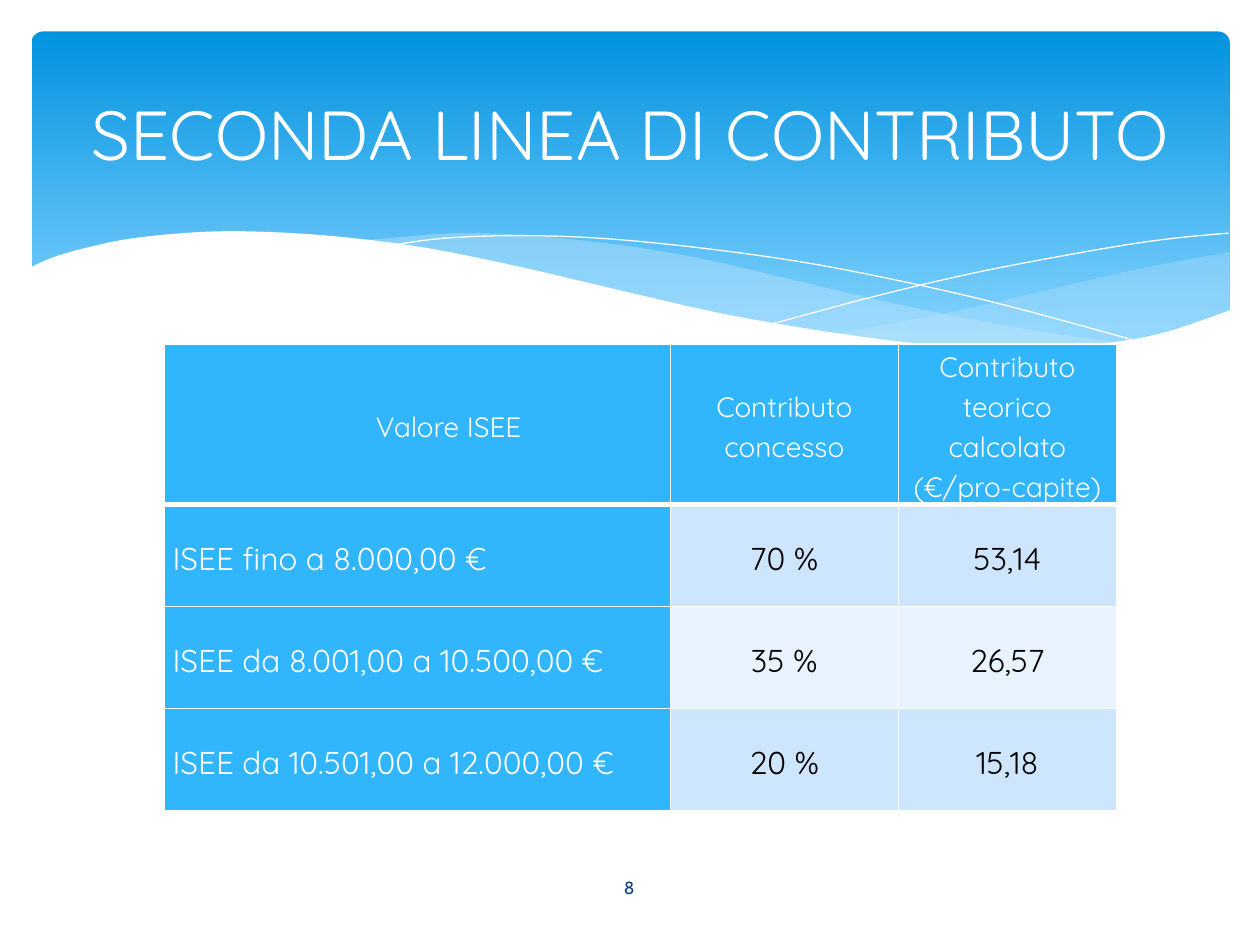
from collections import namedtuple

from lxml.etree import SubElement
from pptx import Presentation
from pptx.dml.color import RGBColor
from pptx.enum.shapes import MSO_SHAPE as Shape
from pptx.enum.text import MSO_ANCHOR as Anchor, MSO_AUTO_SIZE as AutoSize, PP_ALIGN as Align
from pptx.oxml import parse_xml
from pptx.oxml.ns import nsdecls, qn
from pptx.util import Inches, Pt

COLORS = {
    "white": "FFFFFF", "black": "000000", "navy": "073E87",
    "sky_top": "0293E0", "sky_bottom": "83D3FE", "wave": "C6E7FC",
    "head": "31B6FD", "odd_row": "CEE5FE", "even_row": "E8F3FF",
}
Box = namedtuple("Box", "left top width height")

PAGE = Box(0, 0, 10, 7.5)
BAND = Box(0.25, 0.25, 9.51, 2.7)
WAVES = Box(0, 1.84, 10, 1.45)
TABLE = Box(1.3, 2.73, 7.56, 3.65)
TITLE = Box(0.5, 0.37, 9, 1.37)
NUMBER = Box(4.36, 6.84, 1.27, 0.4)

COLUMNS = [4.02, 1.81, 1.73]
ROW_HEIGHT = 0.81
ROWS = [
    ["Valore ISEE", "Contributo concesso", "Contributo teorico calcolato (€/pro-capite)"],
    ["ISEE fino a 8.000,00 €", "70 %", "53,14"],
    ["ISEE da 8.001,00 a 10.500,00 €", "35 %", "26,57"],
    ["ISEE da 10.501,00 a 12.000,00 €", "20 %", "15,18"],
]

# Wave edges: points in tenths of the box width, from the box's top left corner.
RIGHT_TOP = [(9.76, 0.16), (9.06, 0.29), (8.32, 0.46), (7.53, 0.64), (6.61, 0.81)]
RIGHT_BOTTOM = [(6.61, 0.81), (7.19, 0.87), (7.81, 0.93), (8.35, 0.93), (8.89, 0.88),
                (9.35, 0.78), (9.76, 0.63)]
MIDDLE_TOP = [(8.93, 0.89), (8.07, 0.76), (7.06, 0.56), (6.29, 0.38), (5.55, 0.21),
              (4.89, 0.1), (4.2, 0.03), (3.61, 0.01), (2.86, 0.07)]
MIDDLE_BOTTOM = [(2.86, 0.07), (3.62, 0.19), (4.49, 0.38), (5.3, 0.56), (6.01, 0.71),
                 (6.8, 0.84), (7.48, 0.92), (8.18, 0.94), (8.93, 0.89)]
FALLING_LINE = [(3.09, 0.11), (3.53, 0.05), (4.16, 0.03), (4.89, 0.06), (5.82, 0.16),
                (6.65, 0.29), (7.6, 0.49), (8.31, 0.67), (9.07, 0.88)]
RISING_LINE = [(6.13, 0.73), (6.95, 0.51), (7.76, 0.32), (8.66, 0.15), (9.24, 0.06), (9.75, 0.01)]
WHITE_TOP = [(9.77, 0.62), (9.2, 0.81), (8.63, 0.9), (8.09, 0.93), (7.44, 0.9), (6.68, 0.81),
             (5.79, 0.66), (5.03, 0.49), (4.18, 0.29), (3.4, 0.13), (2.71, 0.04), (2.11, 0),
             (1.61, 0), (1.06, 0.05), (0.67, 0.13), (0.4, 0.21), (0.23, 0.29)]
WHITE_BOTTOM = [(0.23, 1.45), (9.77, 1.45)]


def color(name):
    return RGBColor.from_string(COLORS[name])


def emu(box):
    return [Inches(length) for length in box]


def write(frame, text, size=16, font="Quicksand", ink="white", align=Align.CENTER, **spacing):
    """Put one paragraph in the frame; spacing holds paragraph properties."""
    frame.word_wrap = True
    para = frame.paragraphs[0]
    para.alignment = align
    for name, value in spacing.items():
        setattr(para, name, value)
    span = para.add_run()
    span.text = text
    span.font.size, span.font.name, span.font.bold = Pt(size), font, False
    span.font.color.rgb = color(ink)
    return para


def smooth(points, steps=5):
    """Points of a Catmull-Rom curve through the given points."""
    padded = [points[0], *points, points[-1]]
    curve = [points[0]]
    for a, b, c, d in zip(padded, padded[1:], padded[2:], padded[3:]):
        for step in range(1, steps + 1):
            t = step / steps
            curve.append(tuple(
                (2 * q + (r - p) * t + (2 * p - 5 * q + 4 * r - s) * t ** 2
                 + (3 * q - p - 3 * r + s) * t ** 3) / 2
                for p, q, r, s in zip(a, b, c, d)))
    return curve


def add_wave(page, box, points, fill=None, opacity=100):
    """Draw a filled area, or a white hairline when there is no fill."""
    unit = box.width / 10
    spots = [(Inches(box.left + x * unit), Inches(box.top + y * unit)) for x, y in points]
    builder = page.shapes.build_freeform(*spots[0])
    builder.add_line_segments(spots[1:], close=fill is not None)
    wave = builder.convert_to_shape()
    wave.shadow.inherit = False
    if fill is None:
        wave.fill.background()
        wave.line.color.rgb = color("white")
        wave.line.width = 0
        return
    wave.line.fill.background()
    wave.fill.solid()
    wave.fill.fore_color.rgb = color(fill)
    if opacity < 100:
        tint = wave.fill._xPr.find(".//" + qn("a:srgbClr"))
        SubElement(tint, qn("a:alpha")).set("val", str(opacity * 1000))


def add_band(page, box):
    band = page.shapes.add_shape(Shape.ROUNDED_RECTANGLE, *emu(box))
    band.adjustments[0] = 0.034
    band.shadow.inherit = False
    band.line.fill.background()
    band.fill.gradient()
    band.fill.gradient_angle = 270
    stops = zip(band.fill.gradient_stops, (0, 0.9), ("sky_top", "sky_bottom"))
    for stop, position, name in stops:
        stop.position = position
        stop.color.rgb = color(name)


def add_waves(page, box):
    add_wave(page, box, smooth(RIGHT_TOP) + smooth(RIGHT_BOTTOM), "wave", 29)
    add_wave(page, box, smooth(MIDDLE_TOP) + smooth(MIDDLE_BOTTOM), "wave", 40)
    add_wave(page, box, smooth(FALLING_LINE))
    add_wave(page, box, smooth(RISING_LINE))
    add_wave(page, box, smooth(WHITE_TOP) + WHITE_BOTTOM, "white")


def add_borders(cell, top, bottom):
    """White cell borders: 1 pt at the sides, given points at top and bottom."""
    widths = {"lnL": 1, "lnR": 1, "lnT": top, "lnB": bottom}
    for index, (edge, width) in enumerate(widths.items()):
        cell._tc.get_or_add_tcPr().insert(index, parse_xml(
            f'<a:{edge} {nsdecls("a")} w="{Pt(width)}"><a:solidFill>'
            f'<a:srgbClr val="{COLORS["white"]}"/></a:solidFill></a:{edge}>'))


def add_contributions(page, box):
    holder = page.shapes.add_table(len(ROWS), len(COLUMNS), *emu(box))
    table = holder.table
    table.first_row = table.horz_banding = False
    for column, width in zip(table.columns, COLUMNS):
        column.width = Inches(width)
    for row_index, texts in enumerate(ROWS):
        table.rows[row_index].height = Inches(ROW_HEIGHT)
        is_header = row_index == 0
        for column_index, text in enumerate(texts):
            cell = table.cell(row_index, column_index)
            is_label = column_index == 0
            is_head = is_header or is_label
            shade = "head" if is_head else "odd_row" if row_index % 2 else "even_row"
            cell.fill.solid()
            cell.fill.fore_color.rgb = color(shade)
            cell.vertical_anchor = Anchor.MIDDLE
            cell.margin_left = cell.margin_right = Inches(0.07)
            cell.margin_top = cell.margin_bottom = 0
            add_borders(cell, 3 if row_index == 1 else 1, 3 if is_header else 1)
            para = write(cell.text_frame, text, size=16 if is_header else 18,
                         ink="white" if is_head else "black",
                         align=Align.JUSTIFY if is_label and not is_header else Align.CENTER,
                         line_spacing=1.15, space_after=Pt(10))
            if is_header and is_label:
                para._p.get_or_add_pPr().set("marL", str(Inches(0.5)))
    holder.height = Inches(box.height)


def add_page_number(page, box, number):
    frame = page.shapes.add_textbox(*emu(box)).text_frame
    frame.vertical_anchor = Anchor.MIDDLE
    write(frame, number, size=10, font="Cabin", ink="navy")


def add_title(page, box, text):
    title = page.shapes.title
    title.left, title.top, title.width, title.height = emu(box)
    title.text_frame.auto_size = AutoSize.NONE
    title.text_frame.vertical_anchor = Anchor.MIDDLE
    write(title.text_frame, text, size=39.6)
    page.shapes._spTree.append(title._element)


def main():
    deck = Presentation()
    deck.slide_width, deck.slide_height = Inches(PAGE.width), Inches(PAGE.height)
    page = deck.slides.add_slide(deck.slide_layouts[5])
    add_band(page, BAND)
    add_waves(page, WAVES)
    add_contributions(page, TABLE)
    add_page_number(page, NUMBER, "8")
    add_title(page, TITLE, "SECONDA LINEA DI CONTRIBUTO")
    deck.save("out.pptx")


if __name__ == "__main__":
    main()
